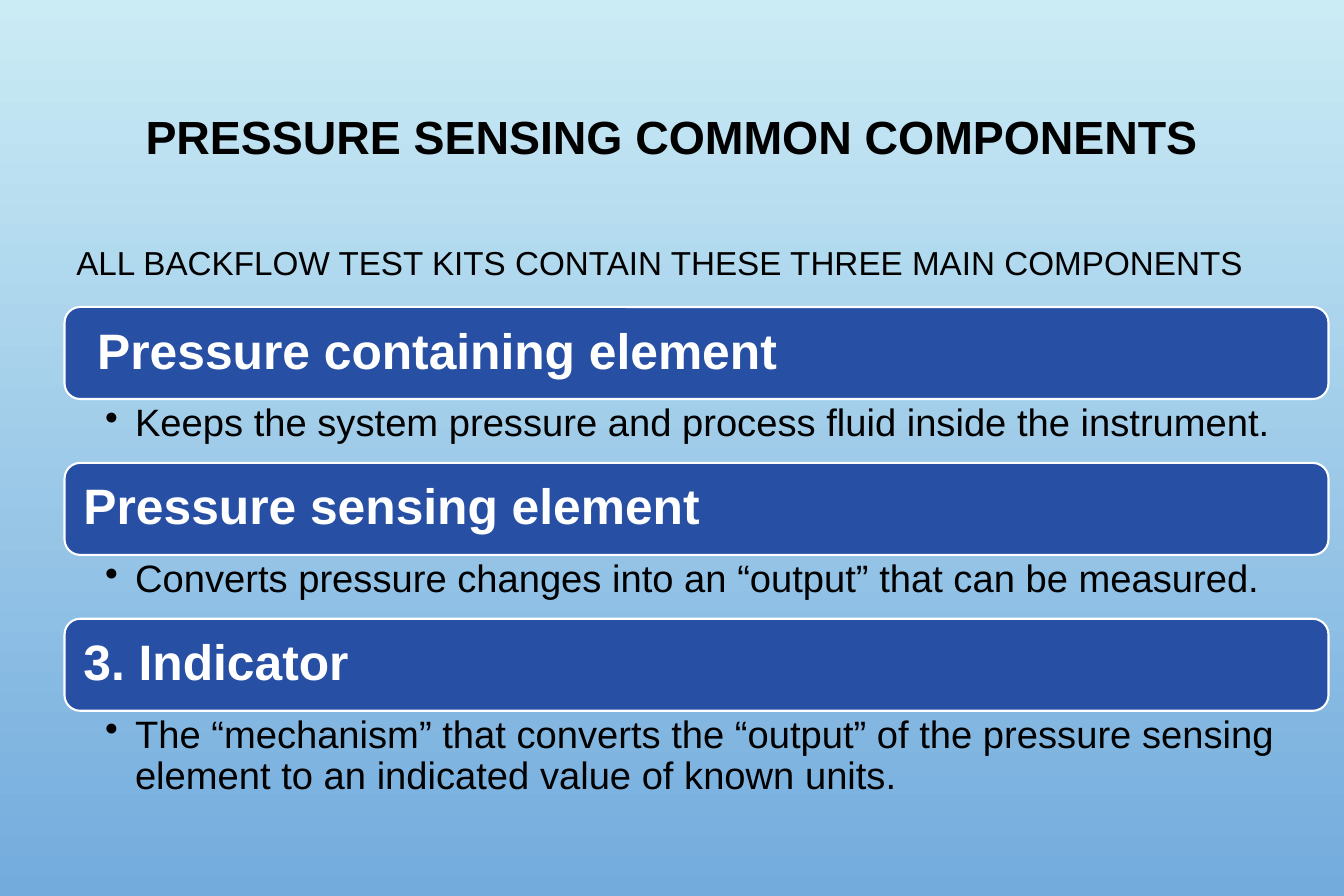
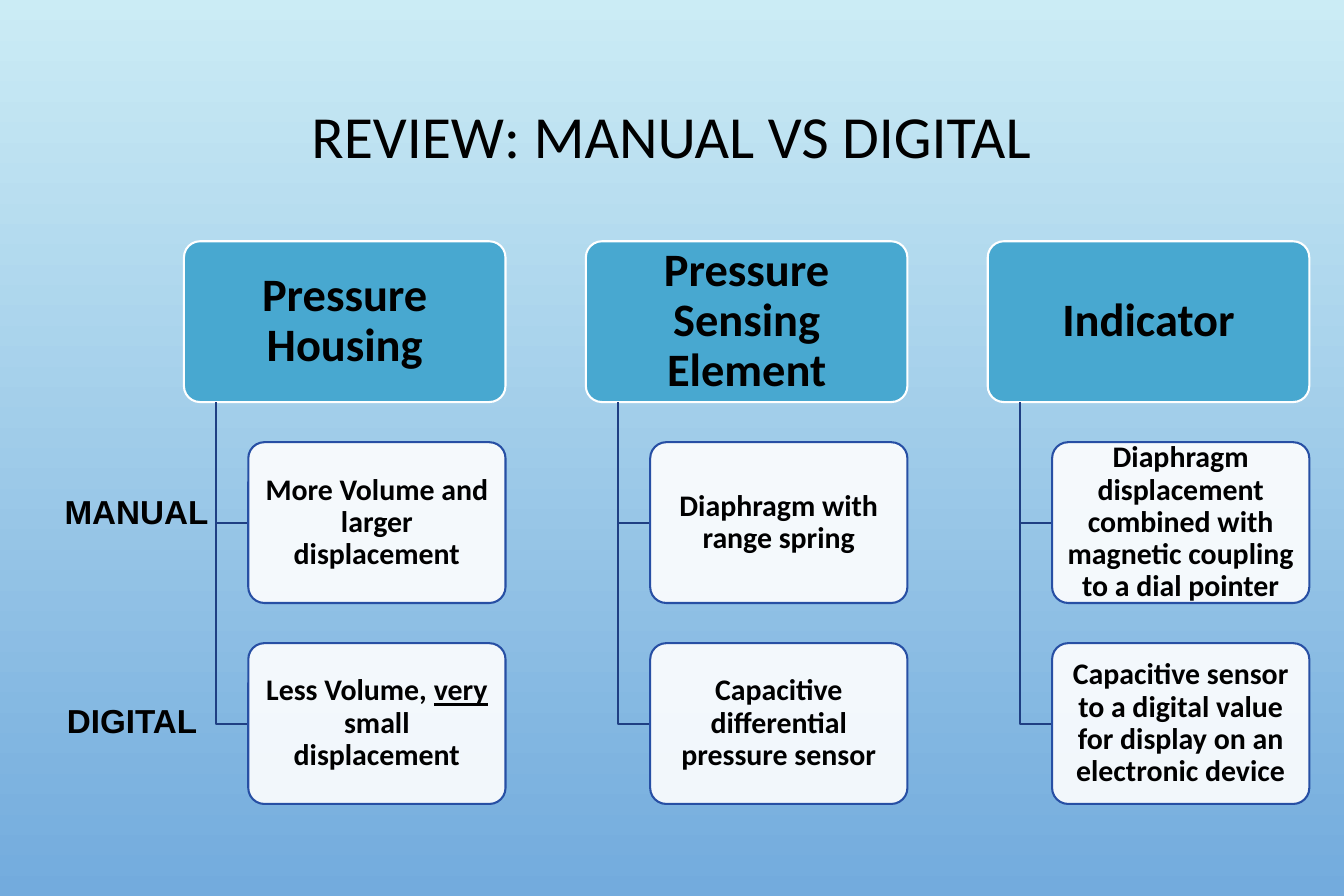
from dataclasses import dataclass

from lxml import etree
from pptx import Presentation
from pptx.dml.color import RGBColor
from pptx.enum.shapes import MSO_SHAPE
from pptx.enum.text import MSO_ANCHOR, PP_ALIGN
from pptx.oxml.ns import qn
from pptx.util import Inches, Pt

ROUNDED = MSO_SHAPE.ROUNDED_RECTANGLE
TOP, MIDDLE = MSO_ANCHOR.TOP, MSO_ANCHOR.MIDDLE
LEFT, CENTER = PP_ALIGN.LEFT, PP_ALIGN.CENTER

COLUMNS, ROWS, CELL = 45, 30, 0.25


@dataclass(frozen=True)
class Font:
    """A typeface with its size, colour and weight."""
    name: str
    size: int
    color: str = "000000"
    bold: bool = False


class Theme:
    """Colours and type styles shared by the slides."""
    sky_top, sky_bottom = "CBECF5", "73ABDD"
    bar, header, leaf, stem, edge = "274FA4", "48A8D0", "FFFFFF", "1F3F83", "FFFFFF"
    line_width = Pt(1.25)
    leaf_opacity = 90
    outline_title = Font("Arial", 28, bold=True)
    tree_title = Font("Calibri", 36)
    intro = Font("Arial", 20)
    bar_text = Font("Arial", 30, "FFFFFF", True)
    detail = Font("Arial", 23)
    header_text = Font("Calibri", 28, bold=True)
    leaf_text = Font("Calibri", 18, bold=True)
    label = Font("Arial", 20, bold=True)


@dataclass(frozen=True)
class Box:
    """A rectangle measured in grid columns and rows."""
    left: float
    top: float
    width: float
    height: float

    def inner(self, left, top, width, height):
        """Return the inner box given as shares of this one."""
        return Box(self.left + left * self.width, self.top + top * self.height,
                   width * self.width, height * self.height)

    def lengths(self):
        """Return left, top, width and height as lengths."""
        return [grid(value) for value in (self.left, self.top, self.width, self.height)]


TITLE = Box(3.36, 3.16, 38.24, 3)
INTRO = Box(2.16, 7.8, 42.32, 1.8)
OUTLINE = Box(2.16, 10.28, 42.32, 15.66)
TREE = Box(6.16, 8.08, 37.68, 18.84)

COMPONENTS = [
    (" Pressure containing element",
     "Keeps the system pressure and process fluid inside the instrument.", 1),
    ("Pressure sensing element",
     "Converts pressure changes into an “output” that can be measured.", 1),
    ("3. Indicator",
     "The “mechanism” that converts the “output” of the pressure sensing element "
     "to an indicated value of known units.", 2),
]
BRANCHES = [
    ("Pressure Housing", ["More Volume and larger displacement",
                          "Less Volume, *very* small displacement"]),
    ("Pressure Sensing Element", ["Diaphragm with range spring",
                                  "Capacitive differential pressure sensor"]),
    ("Indicator", ["Diaphragm displacement combined with magnetic coupling to a dial pointer",
                   "Capacitive sensor to a digital value for display on an electronic device"]),
]
ROW_LABELS = [("MANUAL", Box(2.16, 16.36, 5.24, 1.36)),
              ("DIGITAL", Box(2.24, 23.36, 5.24, 1.36))]


def grid(cells):
    """Convert grid cells to a length."""
    return Inches(cells * CELL)


def rgb(color):
    """Convert a hex string to a colour."""
    return RGBColor.from_string(color)


def write(shape, text, font, align=LEFT, anchor=MIDDLE, insets=(0.1, 0.05),
          spacing=0.9, bullet=False):
    """Fill a shape with one paragraph, underlining words between asterisks."""
    frame = shape.text_frame
    frame.word_wrap = True
    frame.vertical_anchor = anchor
    frame.margin_left = frame.margin_right = Inches(insets[0])
    frame.margin_top = frame.margin_bottom = Inches(insets[1])
    para = frame.paragraphs[0]
    if bullet:
        properties = para._p.get_or_add_pPr()
        properties.set("marL", str(Inches(0.25)))
        properties.set("indent", str(-Inches(0.25)))
        etree.SubElement(properties, qn("a:buChar")).set("char", "•")
    para.alignment = align
    para.line_spacing = spacing
    for index, piece in enumerate(text.split("*")):
        span = para.add_run()
        span.text = piece
        span.font.name = font.name
        span.font.size = Pt(font.size)
        span.font.bold = font.bold
        span.font.color.rgb = rgb(font.color)
        if index % 2:
            span.font.underline = True


def add_text(page, box, text, font, **layout):
    """Add a text box."""
    shape = page.shapes.add_textbox(*box.lengths())
    write(shape, text, font, **layout)
    return shape


def add_card(page, box, fill, edge, corner, opacity=100):
    """Add a rounded rectangle."""
    card = page.shapes.add_shape(ROUNDED, *box.lengths())
    card.shadow.inherit = False
    card.adjustments[0] = corner
    card.fill.solid()
    card.fill.fore_color.rgb = rgb(fill)
    card.line.color.rgb = rgb(edge)
    card.line.width = Theme.line_width
    if opacity < 100:
        color = card.element.spPr.find(qn("a:solidFill"))[0]
        etree.SubElement(color, qn("a:alpha")).set("val", str(opacity * 1000))
    return card


def add_elbow(page, x, top, right, bottom):
    """Draw a line down and then right to a leaf."""
    builder = page.shapes.build_freeform(grid(x), grid(top))
    builder.add_line_segments([(grid(x), grid(bottom)), (grid(right), grid(bottom))],
                              close=False)
    elbow = builder.convert_to_shape()
    elbow.shadow.inherit = False
    elbow.fill.background()
    elbow.line.color.rgb = rgb(Theme.stem)
    elbow.line.width = Theme.line_width


def add_outline(page, box):
    """Stack bars, each followed by its bulleted detail."""
    step = 1 / len(COMPONENTS)
    for index, (heading, detail, lines) in enumerate(COMPONENTS):
        row = box.inner(0, index * step, 1, step)
        bar = add_card(page, row.inner(0, 0, 1, 0.59), Theme.bar, Theme.edge, 0.17)
        write(bar, heading, Theme.bar_text, insets=(0.12, 0.12))
        area = row.inner(0, 0.59, 1, 0.41 + 0.16 * (lines - 1))
        shape = add_text(page, area, detail, Theme.detail, anchor=TOP,
                         insets=(0.34, 0.04), bullet=True)
        shape.text_frame.margin_right = Inches(0.23)


def add_branch(page, box, heading, leaves):
    """Place a header with its leaves hanging from a stem."""
    unit = 1 / (1.25 * len(leaves) + 1)
    header = box.inner(0, 0, 1, unit)
    card = add_card(page, header, Theme.header, Theme.edge, 0.1)
    write(card, heading, Theme.header_text, CENTER, insets=(0.06, 0.04))
    for index, text in enumerate(leaves, 1):
        leaf = box.inner(0.2, 1.25 * index * unit, 0.8, unit)
        add_elbow(page, box.left + 0.1 * box.width, header.top + header.height,
                  leaf.left, leaf.top + leaf.height / 2)
        card = add_card(page, leaf, Theme.leaf, Theme.bar, 0.1, Theme.leaf_opacity)
        write(card, text, Theme.leaf_text, CENTER, insets=(0.04, 0.03))


def add_tree(page, box):
    """Set the branches side by side with gaps of a quarter branch."""
    width = 1 / (1.25 * len(BRANCHES) - 0.25)
    for index, (heading, leaves) in enumerate(BRANCHES):
        add_branch(page, box.inner(1.25 * index * width, 0, width, 1), heading, leaves)


def add_page(deck, title, font):
    """Add a blank slide with its title."""
    page = deck.slides.add_slide(deck.slide_layouts[6])
    add_text(page, TITLE, title, font, align=CENTER)
    return page


def paint_background(deck):
    """Give the master the sky gradient."""
    fill = deck.slide_master.background.fill
    fill.gradient()
    fill.gradient_angle = 270
    for stop, color in zip(fill.gradient_stops, (Theme.sky_top, Theme.sky_bottom)):
        stop.color.rgb = rgb(color)


def components_slide(deck):
    """Build the slide of common components."""
    page = add_page(deck, "PRESSURE SENSING COMMON COMPONENTS", Theme.outline_title)
    add_text(page, INTRO, "ALL BACKFLOW TEST KITS CONTAIN THESE THREE MAIN COMPONENTS",
             Theme.intro, anchor=TOP, spacing=1.1)
    add_outline(page, OUTLINE)


def review_slide(deck):
    """Build the comparison of manual and digital kits."""
    page = add_page(deck, "REVIEW: MANUAL VS DIGITAL", Theme.tree_title)
    add_tree(page, TREE)
    for text, box in ROW_LABELS:
        add_text(page, box, text, Theme.label, insets=(0, 0), spacing=1.1)


def main():
    """Build and save the deck."""
    deck = Presentation()
    deck.slide_width, deck.slide_height = grid(COLUMNS), grid(ROWS)
    paint_background(deck)
    components_slide(deck)
    review_slide(deck)
    deck.save("out.pptx")


if __name__ == "__main__":
    main()
